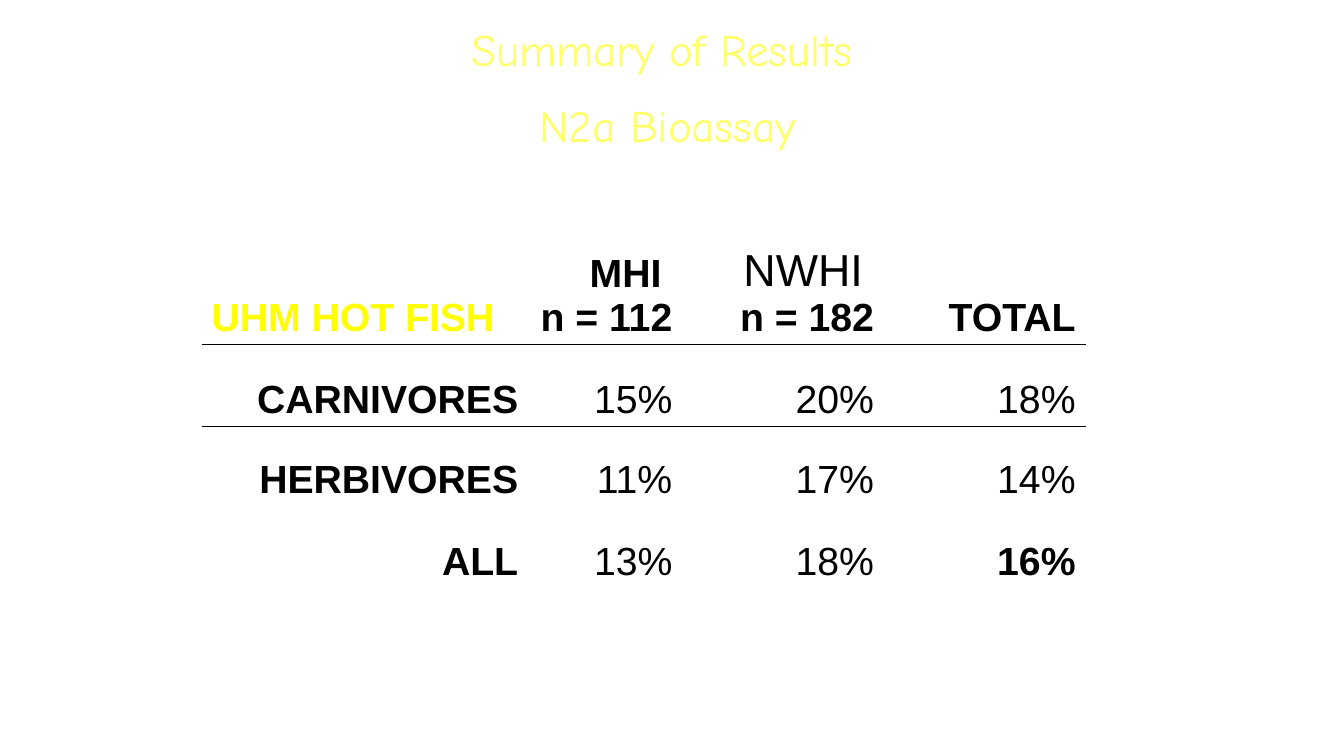
from lxml.etree import SubElement
from pptx import Presentation
from pptx.dml.color import RGBColor
from pptx.enum.text import MSO_ANCHOR as Anchor, MSO_AUTO_SIZE as AutoSize, PP_ALIGN as Align
from pptx.oxml import parse_xml
from pptx.oxml.ns import nsdecls, qn
from pptx.util import Pt

TITLES = [
    ("Summary of Results", 329.76, 12.24, 313.2),
    ("N2a Bioassay", 378, 66.24, 212.4),
]
ROWS = [
    ["UHM HOT FISH", "MHI \nn = 112", "NWHI \nn = 182", "TOTAL"],
    ["CARNIVORES", "15%", "20%", "18%"],
    ["HERBIVORES", "11%", "17%", "14%"],
    ["ALL", "13%", "18%", "16%"],
]
COLUMN_WIDTHS = [233.28, 110.16, 144, 144]
ROW_HEIGHTS = [108, 58.32, 57.6, 58.32]
TABLE_LEFT, TABLE_TOP = 144, 138.24
NO_STYLE = "{2D5ABB26-0587-4C30-8999-92F81FD0307C}"
BLACK, YELLOW, PALE_YELLOW = "000000", "FFFF00", "FFFF66"


def set_font(font, name, size, color, bold=False):
    font.name = name
    font.size = Pt(size)
    font.bold = bold
    font.color.rgb = RGBColor.from_string(color)


def add_title(slide, text, left, top, width):
    shape = slide.shapes.add_textbox(Pt(left), Pt(top), Pt(width), Pt(45.36))
    frame = shape.text_frame
    frame.word_wrap = False
    frame.auto_size = AutoSize.SHAPE_TO_FIT_TEXT
    paragraph = frame.paragraphs[0]
    paragraph.text = text
    set_font(paragraph.font, "Comic Neue", 32, PALE_YELLOW)


def add_border(cell, side, position):
    line = parse_xml(f'<a:{side} {nsdecls("a")} w="{Pt(1)}"/>')
    fill = SubElement(line, qn("a:solidFill"))
    SubElement(fill, qn("a:srgbClr"), val=BLACK)
    cell._tc.get_or_add_tcPr().insert(position, line)


def fill_cell(cell, text, row, column):
    is_corner = row == column == 0
    is_total = row == len(ROWS) - 1 and column == len(ROWS[0]) - 1
    bold = row == 0 or column == 0 or is_total
    cell.fill.background()
    cell.vertical_anchor = Anchor.BOTTOM
    cell.text = text
    for paragraph in cell.text_frame.paragraphs:
        paragraph.alignment = Align.LEFT if is_corner else Align.RIGHT
        set_font(paragraph.font, "Arial", 28, YELLOW if is_corner else BLACK, bold)
    if row == 0:
        add_border(cell, "lnB", 0)
    elif row == 1:
        add_border(cell, "lnT", 0)


def add_results(slide):
    table = slide.shapes.add_table(
        len(ROWS), len(COLUMN_WIDTHS), Pt(TABLE_LEFT), Pt(TABLE_TOP),
        Pt(sum(COLUMN_WIDTHS)), Pt(sum(ROW_HEIGHTS))).table
    table.first_row = table.horz_banding = False
    table._tbl.tblPr.find(qn("a:tableStyleId")).text = NO_STYLE
    for column, width in zip(table.columns, COLUMN_WIDTHS):
        column.width = Pt(width)
    for row, height in zip(table.rows, ROW_HEIGHTS):
        row.height = Pt(height)
    for row, texts in enumerate(ROWS):
        for column, text in enumerate(texts):
            fill_cell(table.cell(row, column), text, row, column)
    heading = table.cell(0, 2).text_frame.paragraphs[0]
    region = heading.runs[0]
    region.text = "NWHI"
    region.font.size = Pt(32)
    region.font.bold = False
    heading.add_run().text = " "


def main():
    presentation = Presentation()
    presentation.slide_width, presentation.slide_height = Pt(960), Pt(540)
    slide = presentation.slides.add_slide(presentation.slide_layouts[6])
    add_results(slide)
    for title in TITLES:
        add_title(slide, *title)
    presentation.save("out.pptx")


if __name__ == "__main__":
    main()
